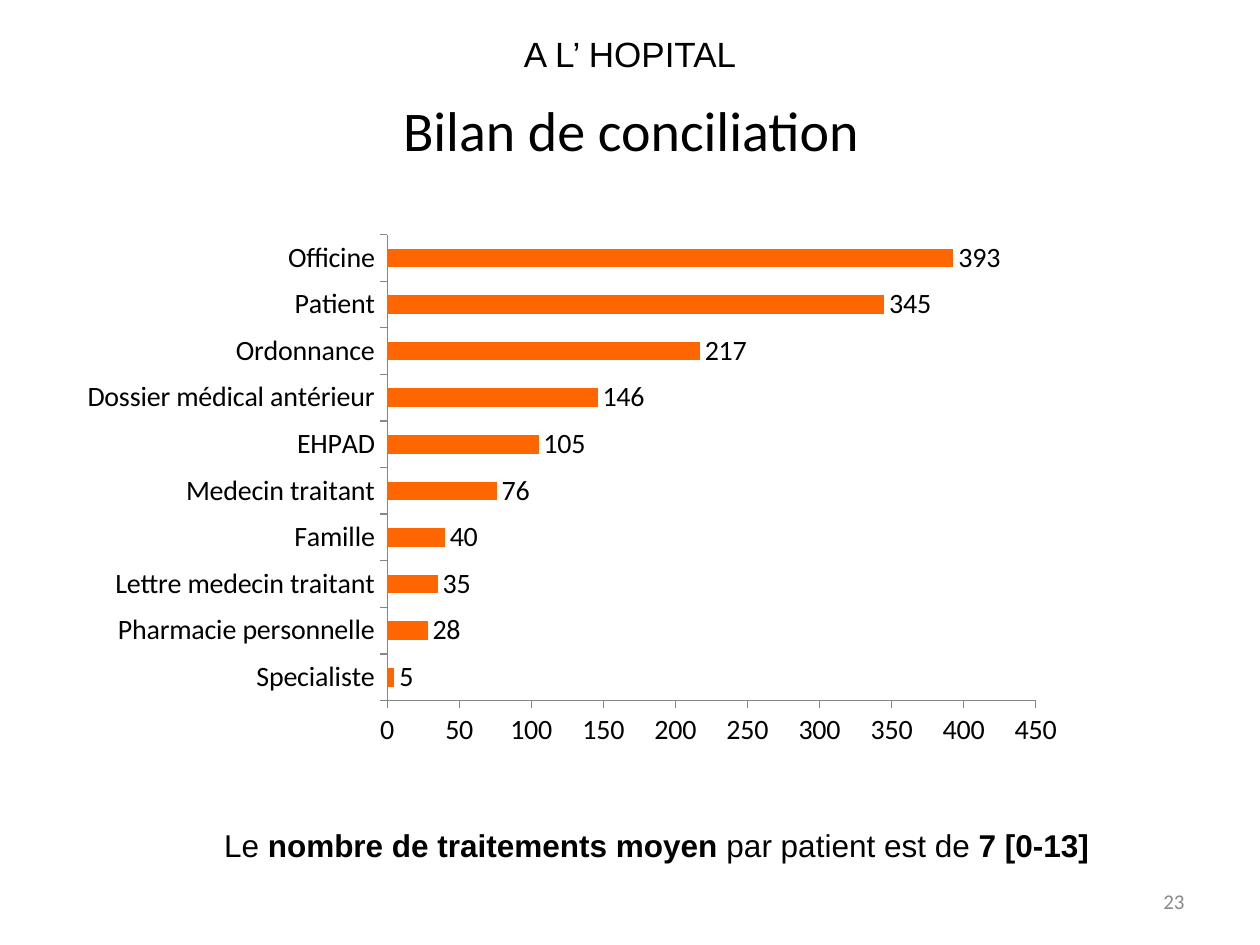
import pptx
import pptx.chart.data
import pptx.dml.color
import pptx.enum.chart
import pptx.enum.text
import pptx.oxml
import pptx.util
from dataclasses import dataclass

Pt = pptx.util.Pt
Align = pptx.enum.text.PP_ALIGN
Anchor = pptx.enum.text.MSO_ANCHOR
Chart = pptx.enum.chart


@dataclass(frozen=True)
class Theme:
    """Hold the colours, fonts and type sizes of the slide."""
    ink: str = "000000"
    bar: str = "FF6600"
    grey: str = "898989"
    axis: str = "868686"
    head: str = "Calibri"
    body: str = "Arial"
    title: int = 32
    label: int = 20
    note: int = 18
    chart: int = 16
    page: int = 12


THEME = Theme()
SOURCES = {
    "Specialiste": 5,
    "Pharmacie personnelle": 28,
    "Lettre medecin traitant": 35,
    "Famille": 40,
    "Medecin traitant": 76,
    "EHPAD": 105,
    "Dossier médical antérieur": 146,
    "Ordonnance": 217,
    "Patient": 345,
    "Officine": 393,
}


def tint(name):
    """Return the colour object for a hex string."""
    return pptx.dml.color.RGBColor.from_string(name)


def style(font, size, face, color=THEME.ink, bold=None):
    """Set size, face, colour and weight of a font."""
    font.size, font.name, font.bold = Pt(size), face, bold
    font.color.rgb = tint(color)


def place(shape, box):
    """Move and size a shape in points."""
    shape.left, shape.top, shape.width, shape.height = map(Pt, box)


def write(shape, *runs, size, face, color=THEME.ink, align=Align.LEFT,
          anchor=Anchor.TOP, wrap=True):
    """Fill a shape with runs, where a (text, True) pair is bold."""
    frame = shape.text_frame
    frame.word_wrap, frame.vertical_anchor = wrap, anchor
    line = frame.paragraphs[0]
    line.alignment = align
    for item in runs:
        text, bold = (item, False) if isinstance(item, str) else item
        run = line.add_run()
        run.text = text
        style(run.font, size, face, color, bold)


def label(slide, box, *runs, **form):
    """Add a formatted text box."""
    write(slide.shapes.add_textbox(*map(Pt, box)), *runs, **form)


def frame_plot(chart, x, y, w, h):
    """Fix the inner plot area as fractions of the chart."""
    area = chart.plots[0]._element.getparent()
    for old in area.findall(pptx.oxml.ns.qn("c:layout")):
        area.remove(old)
    sides = "".join(f'<c:{key} val="{val}"/>' for key, val in
                    (("xMode", "edge"), ("yMode", "edge"),
                     ("x", x), ("y", y), ("w", w), ("h", h)))
    area.insert(0, pptx.oxml.parse_xml(
        f'<c:layout {pptx.oxml.ns.nsdecls("c")}><c:manualLayout>'
        f'<c:layoutTarget val="inner"/>{sides}</c:manualLayout></c:layout>'))


def bars(slide, box, data):
    """Add a horizontal bar chart with value labels."""
    source = pptx.chart.data.CategoryChartData()
    source.categories = list(data)
    source.add_series("Series 1", list(data.values()))
    chart = slide.shapes.add_chart(
        Chart.XL_CHART_TYPE.BAR_CLUSTERED, *map(Pt, box), source).chart
    style(chart.font, THEME.chart, THEME.head)
    chart.has_legend = chart.has_title = False
    for axis in (chart.category_axis, chart.value_axis):
        axis.has_major_gridlines = False
        axis.major_tick_mark = Chart.XL_TICK_MARK.OUTSIDE
        axis.format.line.color.rgb = tint(THEME.axis)
    scale = chart.value_axis
    scale.minimum_scale, scale.maximum_scale, scale.major_unit = 0, 450, 50
    plot = chart.plots[0]
    plot.gap_width, plot.vary_by_categories = 150, False
    plot.has_data_labels = True
    plot.data_labels.show_value = True
    plot.data_labels.position = Chart.XL_LABEL_POSITION.OUTSIDE_END
    fill = plot.series[0].format.fill
    fill.solid()
    fill.fore_color.rgb = tint(THEME.bar)
    frame_plot(chart, 0.32, 0.02, 0.64, 0.87)


def main():
    """Build and save the slide."""
    deck = pptx.Presentation()
    deck.slide_width, deck.slide_height = Pt(720), Pt(540)
    slide = deck.slides.add_slide(deck.slide_layouts[5])
    title = slide.shapes.title
    place(title, (36.7, 28.8, 648, 90))
    write(title, "Bilan de conciliation", size=THEME.title, face=THEME.head,
          align=Align.CENTER, anchor=Anchor.MIDDLE)
    bars(slide, (36, 128, 579, 306), SOURCES)
    label(slide, (116, 468.7, 521, 29), " Le ",
          ("nombre de traitements moyen", True), " par patient est de ",
          ("7 [0-13]", True), size=THEME.note, face=THEME.body)
    label(slide, (516, 500.5, 168, 28.8), "23", size=THEME.page,
          face=THEME.head, color=THEME.grey, align=Align.RIGHT,
          anchor=Anchor.MIDDLE)
    label(slide, (292.3, 15.1, 136.8, 31.7), "A L’ HOPITAL",
          size=THEME.label, face=THEME.body, wrap=False)
    deck.save("out.pptx")


if __name__ == "__main__":
    main()
